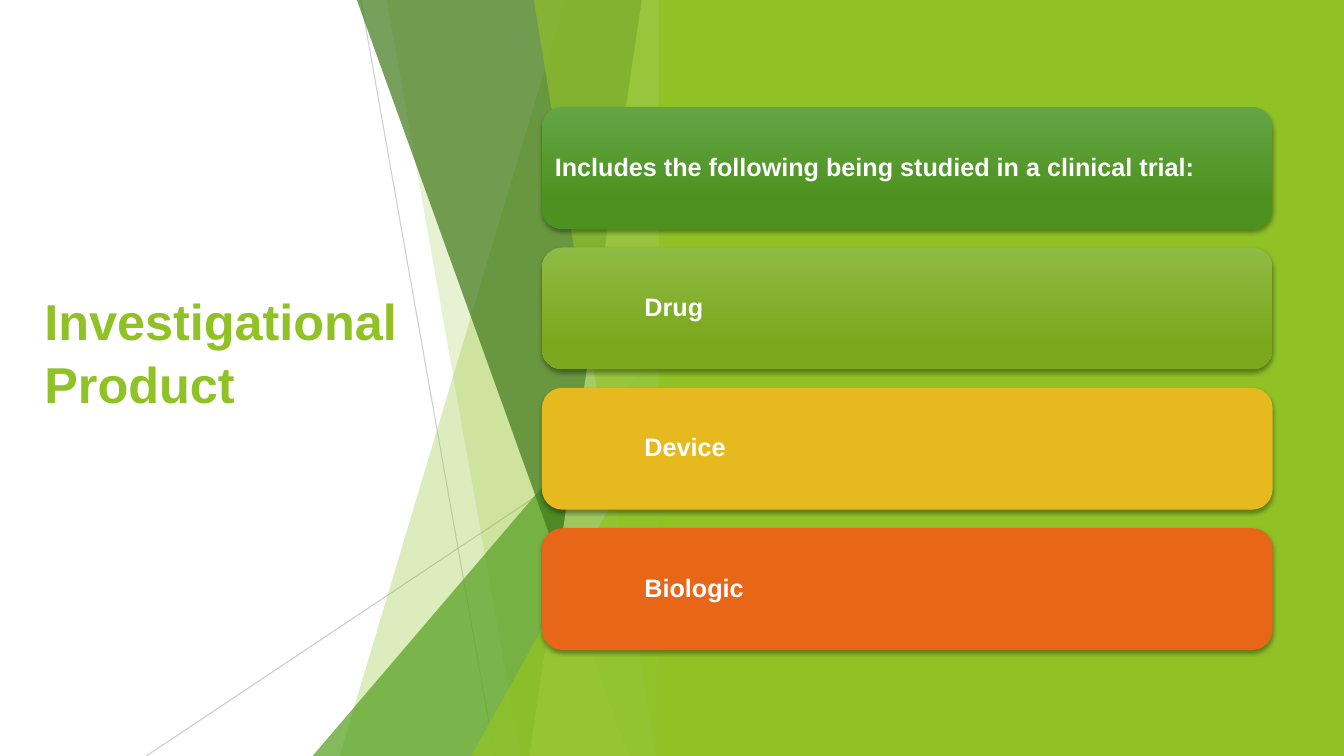
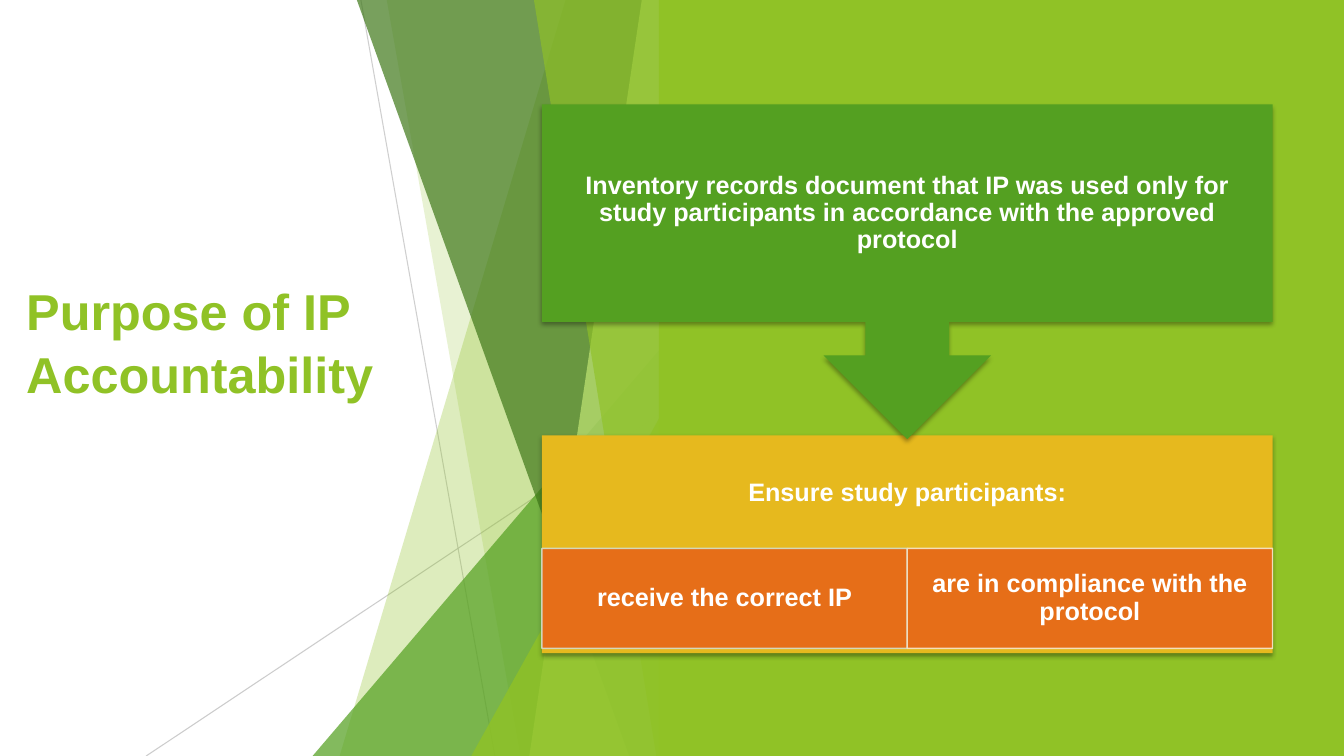
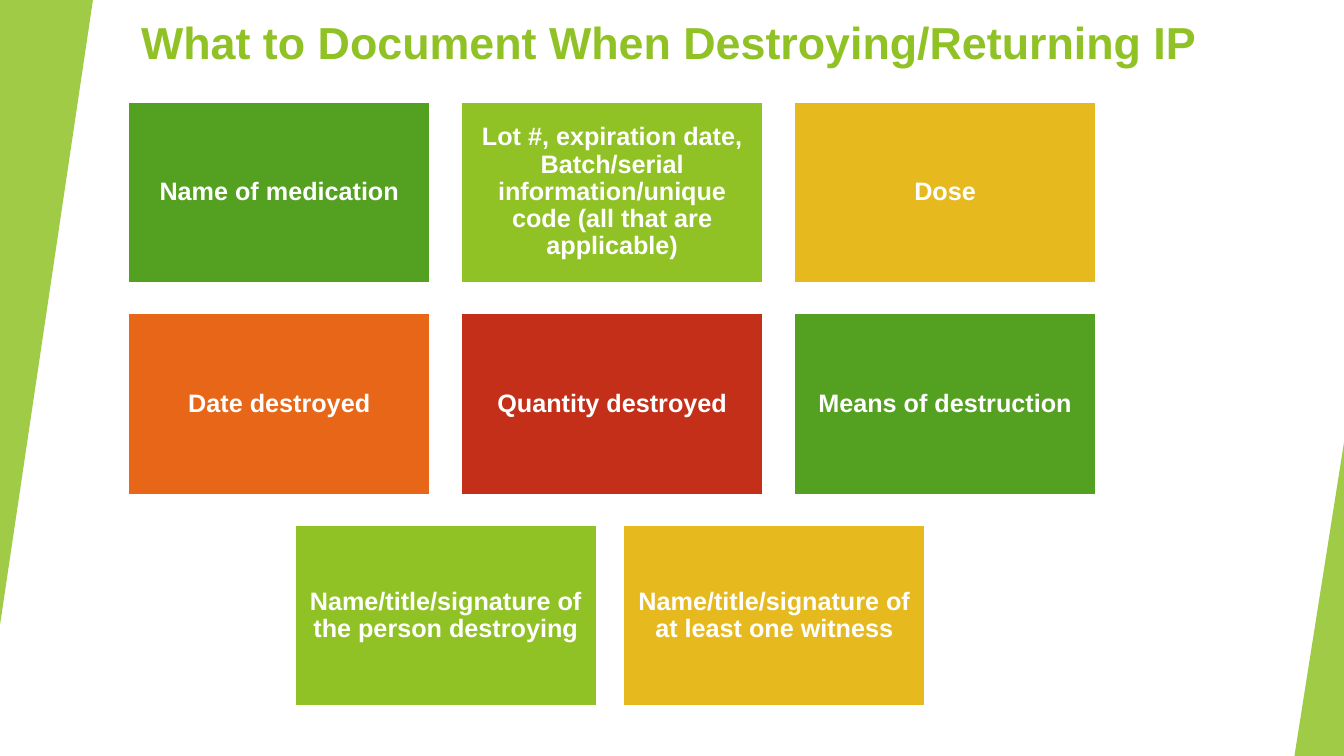
from lxml import etree
from pptx import Presentation
from pptx import util as u
from pptx.dml.color import RGBColor
from pptx.enum import shapes, text
from pptx.oxml import ns

WIDTH, HEIGHT = 960, 540
FONT = "Arial"
COLOURS = {
    "white": "FFFFFF", "lime": "90C226", "green": "54A021",
    "dark": "3F7819", "pale": "C0E474", "gold": "E6B91E",
    "orange": "E76618", "red": "C42F1A", "grey": "BFBFBF",
    "green top": "63A545", "green base": "4D921E",
    "lime top": "8EBB44", "lime base": "7BA81D",
    "mint edge": "D1DFCD", "cream edge": "F5E7CD",
}
SHAPE = shapes.MSO_SHAPE
LEFT, CENTRE = text.PP_ALIGN.LEFT, text.PP_ALIGN.CENTER
TOP, MIDDLE = text.MSO_ANCHOR.TOP, text.MSO_ANCHOR.MIDDLE


def rgb(name):
    return RGBColor.from_string(COLOURS[name])


def add_child(parent, tag, **attributes):
    child = etree.SubElement(parent, ns.qn(tag))
    for key, value in attributes.items():
        child.set(key, str(value))
    return child


def set_alpha(properties, percent):
    """Make the colour below a fill or line element partly transparent."""
    colour = next(properties.iter(ns.qn("a:srgbClr")))
    add_child(colour, "a:alpha", val=percent * 1000)


def write_text(frame, words, size=18, colour="white", align=CENTRE,
               anchor=MIDDLE, spacing=0.9, insets=(5, 5, 5, 5), indent=0):
    frame.word_wrap = True
    frame.auto_size = text.MSO_AUTO_SIZE.NONE
    frame.vertical_anchor = anchor
    (frame.margin_left, frame.margin_top,
     frame.margin_right, frame.margin_bottom) = map(u.Pt, insets)
    para = frame.paragraphs[0]
    para.alignment = align
    para.line_spacing = spacing
    if indent:
        para._p.get_or_add_pPr().set("marL", str(u.Pt(indent)))
    span = para.add_run()
    span.text = words
    span.font.name, span.font.size, span.font.bold = FONT, u.Pt(size), True
    span.font.color.rgb = rgb(colour)


class Slides:
    def __init__(self):
        self.deck = Presentation()
        self.deck.slide_width = u.Pt(WIDTH)
        self.deck.slide_height = u.Pt(HEIGHT)
        self.page = None

    def start(self):
        self.page = self.deck.slides.add_slide(self.deck.slide_layouts[5])

    def title(self, words, place, **style):
        title = self.page.shapes.title
        title.left, title.top, title.width, title.height = map(u.Pt, place)
        style = {"size": 36, "spacing": 1.04, "insets": (7.2, 3.6, 7.2, 3.6), **style}
        write_text(title.text_frame, words, colour="lime", align=LEFT, **style)

    def paint(self, shape, fill, alpha=100, edge=None, edge_width=1, edge_alpha=100):
        """A pair of colour names as fill gives a gradient from top to bottom."""
        shape.shadow.inherit = False
        if isinstance(fill, tuple):
            shape.fill.gradient()
            shape.fill.gradient_angle = 270
            for stop, name, position in zip(shape.fill.gradient_stops, fill, (0, 0.78)):
                stop.color.rgb, stop.position = rgb(name), position
        else:
            shape.fill.solid()
            shape.fill.fore_color.rgb = rgb(fill)
            if alpha < 100:
                set_alpha(shape._element.spPr, alpha)
        if edge is None:
            shape.line.fill.background()
            return
        shape.line.color.rgb = rgb(edge)
        shape.line.width = u.Pt(edge_width)
        if edge_alpha < 100:
            set_alpha(shape.line._ln, edge_alpha)

    def shape(self, kind, place, fill, apex=None, turn=0, shadow=False, **paint):
        shape = self.page.shapes.add_shape(kind, *map(u.Pt, place))
        if apex is not None:
            shape.adjustments[0] = apex
        shape.rotation = turn
        self.paint(shape, fill, **paint)
        if shadow:
            effects = shape._element.spPr.find(ns.qn("a:effectLst"))
            outer = add_child(effects, "a:outerShdw", blurRad=u.Pt(3), dist=u.Pt(2),
                              dir=5400000, rotWithShape=0)
            colour = add_child(outer, "a:srgbClr", val="000000")
            add_child(colour, "a:alpha", val=35000)
        return shape

    def box(self, kind, place, fill, words, style=None, **look):
        box = self.shape(kind, place, fill, **look)
        write_text(box.text_frame, words, **(style or {}))

    def facet(self, top_x, base_x, right, fill, alpha):
        """A full-height band with a slanted left edge."""
        corners = [(right, 0), (right, HEIGHT), (base_x, HEIGHT)]
        outline = self.page.shapes.build_freeform(u.Pt(top_x), 0)
        outline.add_line_segments([(u.Pt(x), u.Pt(y)) for x, y in corners], close=True)
        self.paint(outline.convert_to_shape(), fill, alpha)

    def line(self, start, end, alpha):
        line = self.page.shapes.add_connector(
            shapes.MSO_CONNECTOR.STRAIGHT, *map(u.Pt, start + end))
        line.line.color.rgb = rgb("grey")
        line.line.width = u.Pt(0.75)
        set_alpha(line.line._ln, alpha)
        add_child(line._element.spPr, "a:effectLst")

    def split_background(self):
        """Crossing lines, translucent facets and the lime panel on the right."""
        right = 479.6
        self.line((257.8, 0), (353.5, HEIGHT), 75)
        self.line((right, 290.2), (104.4, HEIGHT), 80)
        self.facet(404, 242.6, right, "lime", 30)
        self.facet(276.3, 371.7, right, "lime", 20)
        self.shape(SHAPE.ISOSCELES_TRIANGLE, (223.3, 239.8, 256.3, 300.2),
                   "green", apex=1, alpha=72)
        self.facet(254.9, 449.4, right, "dark", 70)
        self.facet(458.4, 378.1, right, "pale", 70)
        self.facet(381.4, 468.8, right, "lime", 65)
        self.shape(SHAPE.ISOSCELES_TRIANGLE, (336.6, 283, 143, 257),
                   "lime", apex=1, alpha=80)
        self.shape(SHAPE.RECTANGLE, (470.6, 0, WIDTH - 470.6, HEIGHT), "lime")


def product_slide(slides):
    slides.start()
    slides.title("Investigational Product", (24.5, 89.3, 279.4, 322.6))
    slides.split_background()
    bars = [
        ("Includes the following being studied in a clinical trial:",
         ("green top", "green base"), 0),
        ("Drug", ("lime top", "lime base"), 64),
        ("Device", "gold", 64),
        ("Biologic", "orange", 64),
    ]
    for row, (words, fill, indent) in enumerate(bars):
        slides.box(SHAPE.ROUNDED_RECTANGLE, (387.1, 76.4 + 100.3 * row, 521.9, 87),
                   fill, words, {"align": LEFT, "indent": indent}, shadow=True)


def purpose_slide(slides):
    slides.start()
    slides.title("Purpose of IP Accountability", (11.5, 103.7, 314.6, 322.6),
                 insets=(7.2, 3.6, 7.2, 46.8))
    slides.split_background()
    left, width = 387.1, 521.9
    # Result box, with its heading in the upper part
    slides.box(SHAPE.RECTANGLE, (left, 311, width, 155.5), "gold",
               "Ensure study participants:", {"insets": (10, 10, 10, 82)}, shadow=True)
    cells = [("receive the correct IP", "mint edge"),
             ("are in compliance with the protocol", "cream edge")]
    for column, (words, edge) in enumerate(cells):
        slides.box(SHAPE.RECTANGLE, (left + column * width / 2, 391.7, width / 2, 71.5),
                   "orange", words, {"insets": (10, 2, 10, 2)},
                   alpha=90, edge=edge, edge_alpha=90)
    # Purpose, pointing down to the result
    slides.box(SHAPE.DOWN_ARROW_CALLOUT, (left, 74.6, width, 239), "green",
               "Inventory records document that IP was used only for study "
               "participants in accordance with the approved protocol",
               {"insets": (10, 10, 10, 10)}, shadow=True)


def document_slide(slides):
    slides.start()
    slides.title("What to Document When Destroying/Returning IP",
                 (93.6, 11.5, 802.8, 50.4), size=32, spacing=0.9, anchor=TOP)
    # Side wedges
    slides.shape(SHAPE.ISOSCELES_TRIANGLE, (0, 0, 66.4, 446.4), "lime",
                 apex=1, turn=180, alpha=85)
    slides.shape(SHAPE.ISOSCELES_TRIANGLE, (924.6, 316, 35.4, 224), "lime",
                 apex=1, alpha=85)
    # Cards: left edge and step of each row, then its cards
    rows = [
        (91.5, 237.8, [
            ("Name of medication", "green"),
            ("Lot #, expiration date, Batch/serial information/unique code "
             "(all that are applicable)", "lime"),
            ("Dose", "gold")]),
        (91.5, 237.8, [
            ("Date destroyed", "orange"),
            ("Quantity destroyed", "red"),
            ("Means of destruction", "green")]),
        (210.4, 234.7, [
            ("Name/title/signature of the person destroying", "lime"),
            ("Name/title/signature of at least one witness", "gold")]),
    ]
    for row, (left, step, cards) in enumerate(rows):
        for column, (words, fill) in enumerate(cards):
            place = (left + step * column, 72.5 + 151.3 * row, 216, 129.6)
            slides.box(SHAPE.RECTANGLE, place, fill, words, edge="white", edge_width=1.5)


def main():
    slides = Slides()
    product_slide(slides)
    purpose_slide(slides)
    document_slide(slides)
    slides.deck.save("out.pptx")


if __name__ == "__main__":
    main()
